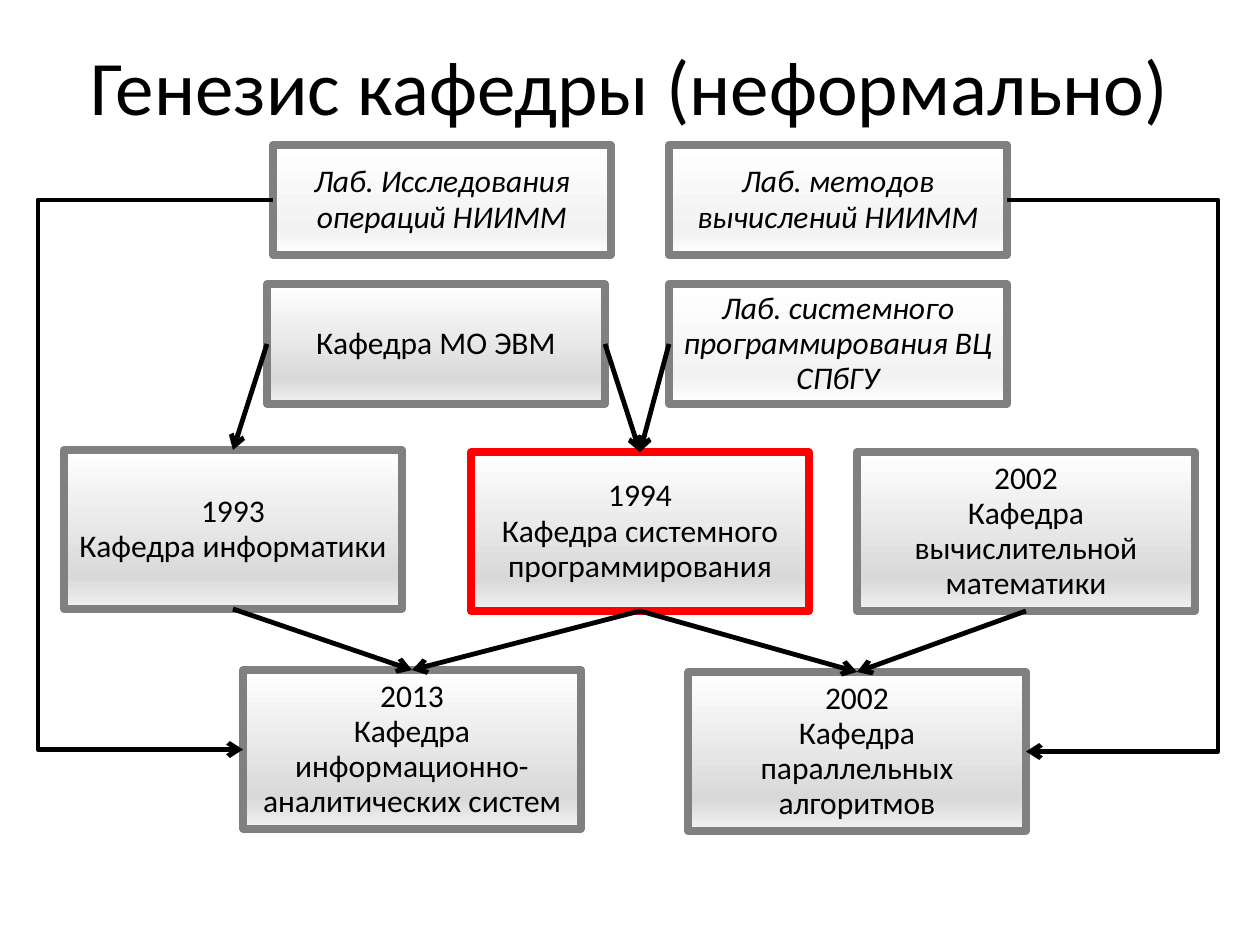
import lxml.etree
import pptx
import pptx.dml.color
import pptx.enum.shapes
import pptx.enum.text
import pptx.oxml.ns
import pptx.util

PX = pptx.util.Inches(1) / 126
FONT = "Calibri"
BLACK = pptx.dml.color.RGBColor(0x00, 0x00, 0x00)
WHITE = pptx.dml.color.RGBColor(0xFF, 0xFF, 0xFF)
PALE = pptx.dml.color.RGBColor(0xF2, 0xF2, 0xF2)
SILVER = pptx.dml.color.RGBColor(0xD9, 0xD9, 0xD9)
GREY = pptx.dml.color.RGBColor(0x80, 0x80, 0x80)
RED = pptx.dml.color.RGBColor(0xFF, 0x00, 0x00)
DEPT_STOPS = ((0, WHITE), (80, SILVER), (100, PALE))
LAB_STOPS = ((0, WHITE), (78, PALE), (100, WHITE))
TOP, LEFT, BOTTOM, RIGHT = range(4)
BOX_W = 338
LAB_H, MIDDLE_H, DEPT_H = 110, 120, 159


def emu(px):
    """Turn px into EMU."""
    return pptx.util.Emu(round(px * PX))


def child(parent, tag, **attrs):
    """Append a namespaced element and return it."""
    return lxml.etree.SubElement(parent, pptx.oxml.ns.qn(tag), attrs)


def write(tf, lines, size, italic=False, spacing=None):
    """Fill a text frame with centred paragraphs."""
    tf.word_wrap = True
    tf.vertical_anchor = pptx.enum.text.MSO_ANCHOR.MIDDLE
    for i, line in enumerate(lines):
        p = tf.paragraphs[0] if i == 0 else tf.add_paragraph()
        p.alignment = pptx.enum.text.PP_ALIGN.CENTER
        p.line_spacing = spacing
        r = p.add_run()
        r.text = line
        r.font.name = FONT
        r.font.size = pptx.util.Pt(size)
        r.font.italic = italic
        r.font.color.rgb = BLACK


def add_title(s, x, y, w, h, text):
    """Place the slide title in the given box."""
    sp = s.shapes.add_textbox(emu(x), emu(y), emu(w), emu(h))
    write(sp.text_frame, [text], 44)


def add_box(s, x, y, h, lines, lab=False, line=GREY):
    """Place one laboratory or department box."""
    sp = s.shapes.add_shape(pptx.enum.shapes.MSO_SHAPE.RECTANGLE,
                            emu(x), emu(y), emu(BOX_W), emu(h))
    sp.shadow.inherit = False
    sp.fill.gradient()
    sp.fill.gradient_angle = 270
    stops = next(sp._element.spPr.iter(pptx.oxml.ns.qn("a:gsLst")))
    for gs in list(stops):
        stops.remove(gs)
    for pos, color in LAB_STOPS if lab else DEPT_STOPS:
        gs = child(stops, "a:gs", pos=str(pos * 1000))
        child(gs, "a:srgbClr", val=str(color))
    sp.line.color.rgb = line
    sp.line.width = pptx.util.Pt(4.25)
    write(sp.text_frame, lines, 18, italic=lab, spacing=0.93)
    return sp


def add_arrow(s, start, start_site, end, end_site, lane=None):
    """Join two boxes by an arrow, bent through a vertical lane if given."""
    types = pptx.enum.shapes.MSO_CONNECTOR
    kind = types.STRAIGHT if lane is None else types.ELBOW
    cx = s.shapes.add_connector(kind, 0, 0, 0, 0)
    cx.begin_connect(start, start_site)
    cx.end_connect(end, end_site)
    cx.line.color.rgb = BLACK
    cx.line.width = pptx.util.Pt(2.75)
    child(cx.line._get_or_add_ln(), "a:tailEnd", type="arrow")
    spPr = cx._element.spPr
    child(spPr, "a:effectLst")
    if lane is not None:
        adj = (emu(lane) - cx.begin_x) / (cx.end_x - cx.begin_x)
        guides = spPr.find(pptx.oxml.ns.qn("a:prstGeom")).get_or_add_avLst()
        child(guides, "a:gd", name="adj1", fmla=f"val {round(adj * 100000)}")


def add_genesis(s, x, y):
    """Place the boxes and arrows of the department tree."""
    def box(dx, dy, h, *lines, **style):
        """Place a box relative to the tree."""
        return add_box(s, x + dx, y + dy, h, lines, **style)

    operations = box(235, 0, LAB_H, "Лаб. Исследования операций НИИММ", lab=True)
    methods = box(631, 0, LAB_H, "Лаб. методов вычислений НИИММ", lab=True)
    software = box(229, 139, MIDDLE_H, "Кафедра МО ЭВМ")
    system_lab = box(631, 139, MIDDLE_H,
                     "Лаб. системного программирования ВЦ СПбГУ", lab=True)
    informatics = box(26, 305, DEPT_H, "1993", "Кафедра информатики")
    system = box(433, 307, DEPT_H, "1994",
                 "Кафедра системного программирования", line=RED)
    computing = box(819, 307, DEPT_H, "2002",
                    "Кафедра вычислительной математики")
    analytics = box(205, 525, DEPT_H, "2013",
                    "Кафедра информационно-аналитических систем")
    parallel = box(650, 527, DEPT_H, "2002",
                   "Кафедра параллельных алгоритмов")

    for start, site, end in ((software, LEFT, informatics),
                             (software, RIGHT, system),
                             (system_lab, LEFT, system),
                             (informatics, BOTTOM, analytics),
                             (system, BOTTOM, analytics),
                             (system, BOTTOM, parallel),
                             (computing, BOTTOM, parallel)):
        add_arrow(s, start, site, end, TOP)
    add_arrow(s, operations, LEFT, analytics, LEFT, lane=x)
    add_arrow(s, methods, RIGHT, parallel, RIGHT, lane=x + 1180)


def main():
    """Build the slide and save it."""
    prs = pptx.Presentation()
    prs.slide_width, prs.slide_height = emu(1260), emu(945)
    s = prs.slides.add_slide(prs.slide_layouts[6])
    add_title(s, 63, 6, 1134, 158, "Генезис кафедры (неформально)")
    add_genesis(s, 38, 145)
    prs.save("out.pptx")


if __name__ == "__main__":
    main()
